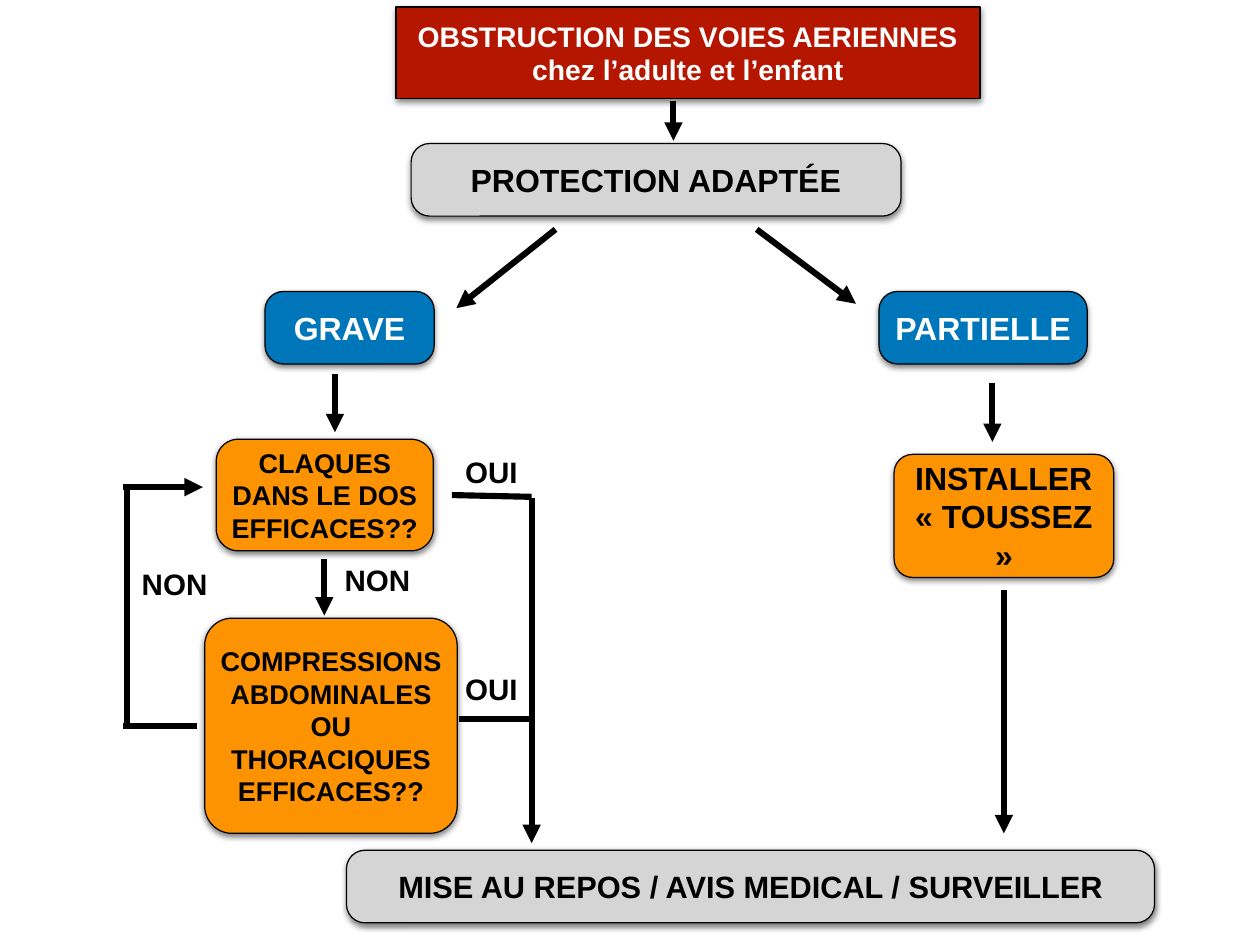
from dataclasses import dataclass

from lxml.etree import SubElement
from pptx import Presentation
from pptx.dml.color import RGBColor
from pptx.enum.shapes import MSO_CONNECTOR, MSO_SHAPE
from pptx.enum.text import MSO_ANCHOR, MSO_AUTO_SIZE, PP_ALIGN
from pptx.oxml.ns import qn
from pptx.shapes.autoshape import Shape
from pptx.slide import Slide
from pptx.util import Inches, Pt


@dataclass(frozen=True)
class Theme:
    font: str = "Arial"
    red: str = "B51600"
    grey: str = "D6D5D5"
    blue: str = "0076BA"
    orange: str = "FE9301"
    black: str = "000000"
    white: str = "FFFFFF"
    title_size: int = 23
    step_size: int = 26
    outcome_size: int = 25
    question_size: int = 22
    answer_size: int = 24
    outline_width: float = 1
    arrow_width: float = 5
    inset: float = 0.06


THEME = Theme()


@dataclass(frozen=True)
class Box:
    text: str
    left: float
    top: float
    width: float
    height: float
    fill: str
    size: int
    color: str = THEME.black
    radius: float = 0.21


@dataclass(frozen=True)
class Answer:
    text: str
    left: float
    top: float
    width: float
    height: float = 0.5


@dataclass(frozen=True)
class Link:
    x1: float
    y1: float
    x2: float
    y2: float
    arrow: bool = True


TITLE = Box("OBSTRUCTION DES VOIES AERIENNES chez l’adulte et l’enfant",
            4.47, 0.08, 6.59, 1.03, THEME.red, THEME.title_size, THEME.white)

BOXES = [
    Box("PROTECTION ADAPTÉE", 4.64, 1.62, 5.53, 0.82, THEME.grey, THEME.step_size),
    Box("GRAVE", 2.99, 3.29, 1.91, 0.82, THEME.blue, THEME.step_size, THEME.white),
    Box("CLAQUES DANS LE DOS EFFICACES??", 2.44, 4.96, 2.45, 1.26,
        THEME.orange, THEME.question_size, radius=0.25),
    Box("COMPRESSIONS ABDOMINALES OU THORACIQUES EFFICACES??", 2.31, 6.98, 2.85, 2.43,
        THEME.orange, THEME.question_size, radius=0.31),
    Box("MISE AU REPOS / AVIS MEDICAL / SURVEILLER", 3.91, 9.6, 9.12, 0.82,
        THEME.grey, THEME.outcome_size),
    Box("PARTIELLE", 9.92, 3.29, 2.35, 0.82, THEME.blue, THEME.step_size, THEME.white),
    Box("INSTALLER « TOUSSEZ »", 10.09, 5.13, 2.48, 1.39, THEME.orange, THEME.step_size),
]

ANSWERS = [
    Answer("NON", 3.82, 6.3, 0.88),
    Answer("NON", 1.53, 6.34, 0.88),
    Answer("OUI", 5.18, 5.08, 0.73),
    Answer("OUI", 5.18, 7.53, 0.73),
]

LINKS = [
    Link(7.6, 1.14, 7.6, 1.59),
    Link(6.27, 2.59, 5.15, 3.48),
    Link(8.54, 2.59, 9.66, 3.43),
    Link(3.78, 4.22, 3.78, 4.88),
    Link(11.2, 4.32, 11.2, 4.99),
    Link(3.66, 6.31, 3.66, 6.95),
    Link(11.33, 6.66, 11.33, 9.41),
    Link(5.1, 5.59, 6, 5.61, arrow=False),
    Link(5.18, 8.12, 6, 8.12, arrow=False),
    Link(6, 5.62, 6, 9.52),
    Link(2.22, 8.2, 1.39, 8.2, arrow=False),
    Link(1.43, 8.23, 1.43, 5.48, arrow=False),
    Link(1.39, 5.5, 2.29, 5.5),
]


def write_text(shape: Shape, text: str, size: int, color: str, wrap: bool) -> None:
    frame = shape.text_frame
    frame.text = text
    frame.word_wrap = wrap
    frame.auto_size = MSO_AUTO_SIZE.NONE
    frame.vertical_anchor = MSO_ANCHOR.MIDDLE
    frame.margin_left = frame.margin_right = Inches(THEME.inset)
    frame.margin_top = frame.margin_bottom = Inches(THEME.inset)
    paragraph = frame.paragraphs[0]
    paragraph.alignment = PP_ALIGN.CENTER
    font = paragraph.runs[0].font
    font.name = THEME.font
    font.size = Pt(size)
    font.bold = True
    font.color.rgb = RGBColor.from_string(color)


def add_soft_shadow(shape: Shape) -> None:
    shape.shadow.inherit = False
    effects = shape.element.spPr.find(qn("a:effectLst"))
    shadow = SubElement(effects, qn("a:outerShdw"), blurRad=str(Pt(5)), dist=str(Pt(2)),
                        dir="5400000", rotWithShape="0")
    color = SubElement(shadow, qn("a:srgbClr"), val=THEME.black)
    SubElement(color, qn("a:alpha"), val="50000")


def format_box(shape: Shape, box: Box) -> None:
    shape.adjustments[0] = box.radius / min(box.width, box.height)
    shape.fill.solid()
    shape.fill.fore_color.rgb = RGBColor.from_string(box.fill)
    shape.line.color.rgb = RGBColor.from_string(THEME.black)
    shape.line.width = Pt(THEME.outline_width)
    add_soft_shadow(shape)
    write_text(shape, box.text, box.size, box.color, wrap=True)


def place_title(slide: Slide, box: Box) -> None:
    """Turn the title placeholder into a rounded box."""
    title = slide.shapes.title
    title.left, title.top = Inches(box.left), Inches(box.top)
    title.width, title.height = Inches(box.width), Inches(box.height)
    geometry = SubElement(title.element.spPr, qn("a:prstGeom"), prst="roundRect")
    guides = SubElement(geometry, qn("a:avLst"))
    SubElement(guides, qn("a:gd"), name="adj", fmla="val 16667")
    format_box(title, box)


def add_box(slide: Slide, box: Box) -> None:
    shape = slide.shapes.add_shape(
        MSO_SHAPE.ROUNDED_RECTANGLE, Inches(box.left), Inches(box.top),
        Inches(box.width), Inches(box.height))
    format_box(shape, box)


def add_answer(slide: Slide, answer: Answer) -> None:
    shape = slide.shapes.add_textbox(Inches(answer.left), Inches(answer.top),
                                     Inches(answer.width), Inches(answer.height))
    write_text(shape, answer.text, THEME.answer_size, THEME.black, wrap=False)


def add_link(slide: Slide, link: Link) -> None:
    connector = slide.shapes.add_connector(
        MSO_CONNECTOR.STRAIGHT, Inches(link.x1), Inches(link.y1),
        Inches(link.x2), Inches(link.y2))
    connector.line.color.rgb = RGBColor.from_string(THEME.black)
    connector.line.width = Pt(THEME.arrow_width)
    properties = connector.element.spPr
    if link.arrow:
        SubElement(properties.find(qn("a:ln")), qn("a:tailEnd"), type="triangle")
    SubElement(properties, qn("a:effectLst"))


def main() -> None:
    presentation = Presentation()
    presentation.slide_width = Inches(14.22)
    presentation.slide_height = Inches(10.67)
    title_only = presentation.slide_layouts.get_by_name("Title Only")
    slide = presentation.slides.add_slide(title_only)
    place_title(slide, TITLE)
    for box in BOXES:
        add_box(slide, box)
    for answer in ANSWERS:
        add_answer(slide, answer)
    for link in LINKS:
        add_link(slide, link)
    presentation.save("out.pptx")


if __name__ == "__main__":
    main()
